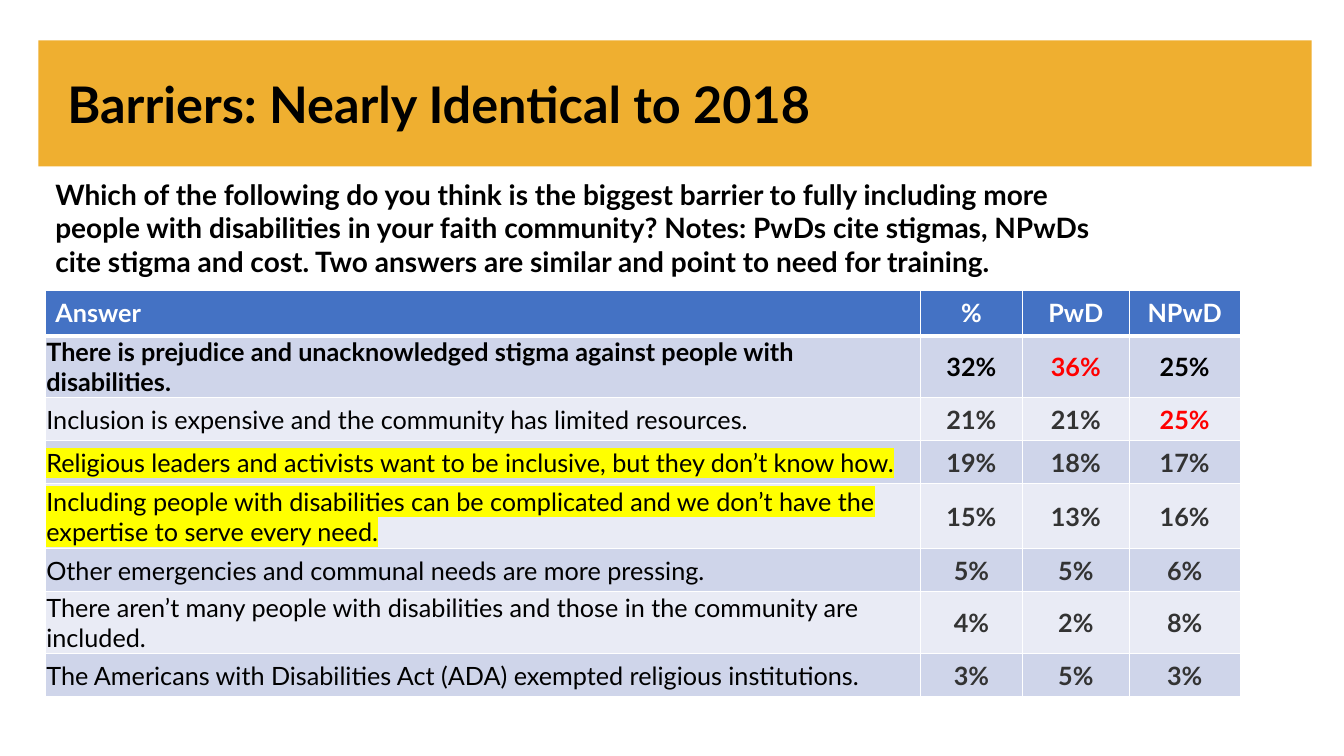
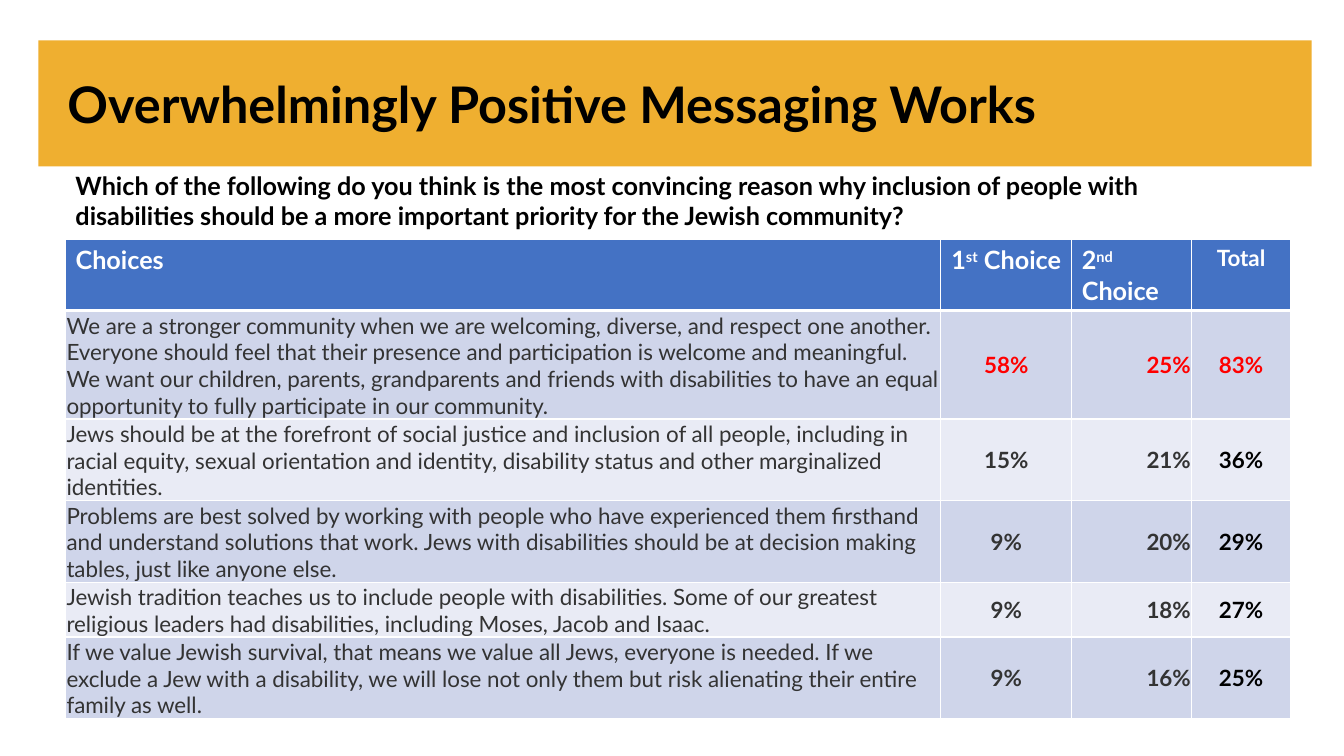
from lxml import etree
from pptx import Presentation
from pptx.dml.color import RGBColor
from pptx.enum.shapes import MSO_SHAPE
from pptx.enum.text import MSO_ANCHOR, PP_ALIGN
from pptx.oxml.ns import qn
from pptx.util import Inches, Pt

RECT = MSO_SHAPE.RECTANGLE
TOP, MIDDLE, BOTTOM = MSO_ANCHOR.TOP, MSO_ANCHOR.MIDDLE, MSO_ANCHOR.BOTTOM
LEFT, CENTER, RIGHT = PP_ALIGN.LEFT, PP_ALIGN.CENTER, PP_ALIGN.RIGHT

FONT = "Lato"
COLORS = {
    "band": "EFAF30", "header": "4472C4", "odd": "CFD5EA", "even": "E9EBF5",
    "white": "FFFFFF", "black": "000000", "gray": "333333", "red": "FF0000",
    "yellow": "FFFF00",
}
BAND_BOX = (0.38, 0.4, 12.63, 1.25)
TITLE_BOX = (0.57, 0.4, 11.62, 1.25)
TIGHT = {"margin_left": 0.01, "margin_top": 0.01, "margin_right": 0.01, "margin_bottom": 0}

BARRIERS = [
    ("Answer", "%", "PwD", "NPwD"),
    ("There is prejudice and unacknowledged stigma against people with disabilities.",
     "32%", "36%", "25%"),
    ("Inclusion is expensive and the community has limited resources.", "21%", "21%", "25%"),
    ("Religious leaders and activists want to be inclusive, but they don’t know how.",
     "19%", "18%", "17%"),
    ("Including people with disabilities can be complicated and we don’t have the "
     "expertise to serve every need.", "15%", "13%", "16%"),
    ("Other emergencies and communal needs are more pressing.", "5%", "5%", "6%"),
    ("There aren’t many people with disabilities and those in the community are included.",
     "4%", "2%", "8%"),
    ("The Americans with Disabilities Act (ADA) exempted religious institutions.",
     "3%", "5%", "3%"),
]
MESSAGES = [
    ("Choices", "1^st^ Choice", "2^nd^ Choice", "Total"),
    ("We are a stronger community when we are welcoming, diverse, and respect one another. "
     "Everyone should feel that their presence and participation is welcome and meaningful. "
     "We want our children, parents, grandparents and friends with disabilities to have an "
     "equal opportunity to fully participate in our community.", "58%", "25%", "83%"),
    ("Jews should be at the forefront of social justice and inclusion of all people, "
     "including in racial equity, sexual orientation and identity, disability status and "
     "other marginalized identities.", "15%", "21%", "36%"),
    ("Problems are best solved by working with people who have experienced them firsthand "
     "and understand solutions that work. Jews with disabilities should be at decision "
     "making tables, just like anyone else.", "9%", "20%", "29%"),
    ("Jewish tradition teaches us to include people with disabilities. Some of our greatest "
     "religious leaders had disabilities, including Moses, Jacob and Isaac.",
     "9%", "18%", "27%"),
    ("If we value Jewish survival, that means we value all Jews, everyone is needed. If we "
     "exclude a Jew with a disability, we will lose not only them but risk alienating their "
     "entire family as well.", "9%", "16%", "25%"),
]


def rgb(name):
    return RGBColor.from_string(COLORS[name])


def inches(box):
    return [Inches(v) for v in box]


def add_color(parent, tag, name):
    el = etree.SubElement(parent, qn(tag))
    etree.SubElement(el, qn("a:srgbClr")).set("val", COLORS[name])
    return el


def write(tf, text, size, color="black", bold=True, align=LEFT, highlight=None):
    """Fill the first paragraph; text between ^ marks is superscript."""
    p = tf.paragraphs[0]
    p.alignment = align
    for i, part in enumerate(text.split("^")):
        r = p.add_run()
        r.text = part
        for key, value in {"name": FONT, "size": Pt(size), "bold": bold}.items():
            setattr(r.font, key, value)
        r.font.color.rgb = rgb(color)
        rpr = r.font._element
        if i % 2:
            rpr.set("baseline", "30000")
        if highlight:
            mark = add_color(rpr, "a:highlight", highlight)
            rpr.find(qn("a:latin")).addprevious(mark)


def add_text(s, box, text, size, anchor=TOP):
    tf = s.shapes.add_textbox(*inches(box)).text_frame
    tf.word_wrap = True
    tf.vertical_anchor = anchor
    write(tf, text, size)


def add_title_band(s, title):
    band = s.shapes.add_shape(RECT, *inches(BAND_BOX))
    band.shadow.inherit = False
    band.fill.solid()
    band.fill.fore_color.rgb = rgb("band")
    band.line.fill.background()
    add_text(s, TITLE_BOX, title, 36, MIDDLE)


def add_borders(cell, row):
    """White lines, thick between the header and the first body row."""
    tcpr = cell._tc.get_or_add_tcPr()
    for i, side in enumerate(("L", "R", "T", "B")):
        thick = (row, side) in ((0, "B"), (1, "T"))
        ln = etree.Element(qn(f"a:ln{side}"), w=str(Pt(3 if thick else 1)))
        add_color(ln, "a:solidFill", "white")
        tcpr.insert(i, ln)


def add_table(s, left, top, widths, heights, rows, style):
    """style(row, col) gives the cell's anchor, whether it is tight, and its text format."""
    box = inches((left, top, sum(widths), sum(heights)))
    table = s.shapes.add_table(len(rows), len(widths), *box).table
    table.first_row = table.horz_banding = False
    for col, width in zip(table.columns, widths):
        col.width = Inches(width)
    for i, (height, texts) in enumerate(zip(heights, rows)):
        table.rows[i].height = Inches(height)
        fill = "header" if i == 0 else "odd" if i % 2 else "even"
        for j, text in enumerate(texts):
            cell = table.cell(i, j)
            anchor, tight, fmt = style(i, j)
            cell.vertical_anchor = anchor
            if tight:
                for key, value in TIGHT.items():
                    setattr(cell, key, Inches(value))
            cell.fill.solid()
            cell.fill.fore_color.rgb = rgb(fill)
            add_borders(cell, i)
            write(cell.text_frame, text, **fmt)


def barrier_style(row, col):
    fmt = {"size": 18, "align": CENTER if col else LEFT}
    if row == 0:
        fmt["color"] = "white"
    elif (row, col) in ((1, 2), (2, 3)):
        fmt["color"] = "red"
    elif row > 1 and col:
        fmt["color"] = "gray"
    elif row > 1:
        fmt["bold"] = False
        fmt["highlight"] = "yellow" if row in (3, 4) else None
    return MIDDLE, row > 0, fmt


def message_style(row, col):
    if row == 0:
        return TOP, False, {"size": 16 if col == 3 else 18, "color": "white",
                            "align": CENTER if col in (1, 3) else LEFT}
    color = "red" if row == 1 and col else "black" if col == 3 else "gray"
    fmt = {"size": 16, "color": color, "bold": col > 0,
           "align": (LEFT, CENTER, RIGHT, CENTER)[col]}
    return MIDDLE if col else BOTTOM, col < 3, fmt


def barriers_slide(s):
    add_title_band(s, "Barriers: Nearly Identical to 2018")
    add_text(s, (0.45, 1.71, 10.84, 1.11),
             "Which of the following do you think is the biggest barrier to fully including "
             "more people with disabilities in your faith community? Notes: PwDs cite "
             "stigmas, NPwDs cite stigma and cost. Two answers are similar and point to "
             "need for training.", 20)
    add_table(s, 0.45, 2.88, (8.68, 1.01, 1.06, 1.1),
              (0.45, 0.61, 0.43, 0.43, 0.64, 0.43, 0.61, 0.43), BARRIERS, barrier_style)


def messages_slide(s):
    add_title_band(s, "Overwhelmingly Positive Messaging Works")
    add_text(s, (0.65, 1.64, 11.62, 0.71),
             "Which of the following do you think is the most convincing reason why inclusion "
             "of people with disabilities should be a more important priority for the Jewish "
             "community?", 18)
    add_table(s, 0.65, 2.38, (8.68, 1.3, 1.19, 0.98),
              (0.7, 1.07, 0.81, 0.81, 0.54, 0.81), MESSAGES, message_style)


def main():
    prs = Presentation()
    prs.slide_width, prs.slide_height = Inches(13.33), Inches(7.5)
    for build in (barriers_slide, messages_slide):
        build(prs.slides.add_slide(prs.slide_layouts[6]))
    prs.save("out.pptx")


if __name__ == "__main__":
    main()
